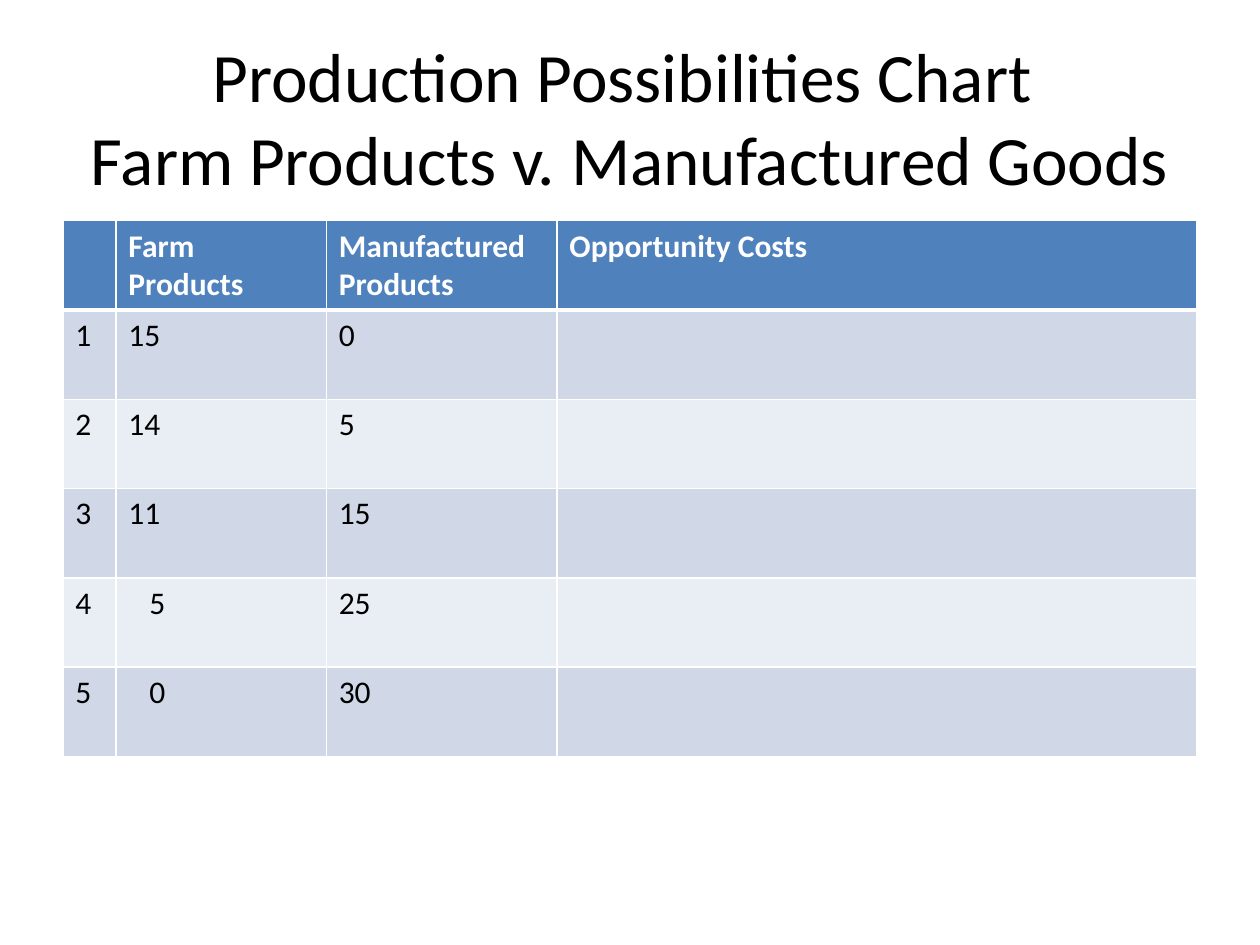
from lxml.etree import SubElement
from pptx import Presentation
from pptx.dml.color import RGBColor
from pptx.enum.text import MSO_ANCHOR as Anchor, PP_ALIGN as Align
from pptx.oxml.ns import qn
from pptx.util import Cm, Pt

BLACK = RGBColor(0x00, 0x00, 0x00)
WHITE = RGBColor(0xFF, 0xFF, 0xFF)
HEADER = RGBColor(0x4F, 0x81, 0xBD)
BANDS = (RGBColor(0xD0, 0xD8, 0xE8), RGBColor(0xE9, 0xED, 0xF4))

LEFT, WIDTH = 1.27, 22.86
COLUMNS = (1.07, 4.24, 4.65, 12.9)
ROW_HEIGHT = 1.8
CELL_MARGIN, DIGIT_INDENT = 0.25, 0.42

HEADINGS = ("", "Farm\nProducts", "Manufactured Products", "Opportunity Costs")
POSSIBILITIES = ((15, 0), (14, 5), (11, 15), (5, 25), (0, 30))


class SlideBuilder:
    font = "Calibri"
    title_size = Pt(39.6)
    table_size = Pt(18)

    def __init__(self, slide):
        self.s = slide

    def run(self, p, text, size, color, bold=False):
        r = p.add_run()
        r.text = text
        r.font.name, r.font.size, r.font.bold = self.font, size, bold
        r.font.color.rgb = color

    def title(self, lines, top, height):
        sp = self.s.shapes.add_textbox(Cm(LEFT), Cm(top), Cm(WIDTH), Cm(height))
        tf = sp.text_frame
        tf.word_wrap = True
        tf.vertical_anchor = Anchor.MIDDLE
        p = tf.paragraphs[0]
        p.alignment = Align.CENTER
        for i, line in enumerate(lines):
            if i:
                p.add_line_break()
            self.run(p, line, self.title_size, BLACK)

    def borders(self, cell, bottom):
        """Draw white cell borders, 1 pt wide except for the bottom one."""
        pr = cell._tc.get_or_add_tcPr()
        for i, (side, width) in enumerate((("L", 1), ("R", 1), ("T", 1), ("B", bottom))):
            ln = pr.makeelement(qn(f"a:ln{side}"), {"w": str(Pt(width))})
            fill = SubElement(ln, qn("a:solidFill"))
            SubElement(fill, qn("a:srgbClr"), val=str(WHITE))
            pr.insert(i, ln)

    def cell(self, cell, text, fill, color, bold=False, bottom=1, indent=0):
        cell.fill.solid()
        cell.fill.fore_color.rgb = fill
        cell.margin_left = Cm(CELL_MARGIN + indent)
        self.borders(cell, bottom)
        tf = cell.text_frame
        for i, line in enumerate(text.split("\n") if text else ()):
            p = tf.add_paragraph() if i else tf.paragraphs[0]
            self.run(p, line, self.table_size, color, bold)

    def table(self, top):
        rows = len(POSSIBILITIES) + 1
        table = self.s.shapes.add_table(
            rows, len(COLUMNS), Cm(LEFT), Cm(top), Cm(WIDTH), Cm(rows * ROW_HEIGHT)).table
        for column, width in zip(table.columns, COLUMNS):
            column.width = Cm(width)
        for row in table.rows:
            row.height = Cm(ROW_HEIGHT)
        for c, heading in enumerate(HEADINGS):
            self.cell(table.cell(0, c), heading, HEADER, WHITE, bold=True, bottom=3)
        for n, (farm, goods) in enumerate(POSSIBILITIES, 1):
            for c, text in enumerate((str(n), str(farm), str(goods), "")):
                indent = DIGIT_INDENT if c == 1 and farm < 10 else 0
                self.cell(table.cell(n, c), text, BANDS[(n - 1) % 2], BLACK, indent=indent)


def main():
    prs = Presentation()
    prs.slide_width, prs.slide_height = Cm(25.4), Cm(19.05)
    builder = SlideBuilder(prs.slides.add_slide(prs.slide_layouts[6]))
    builder.title(("Production Possibilities Chart ", "Farm Products v. Manufactured Goods"),
                  top=0.76, height=3.18)
    builder.table(top=4.45)
    prs.save("out.pptx")


if __name__ == "__main__":
    main()
